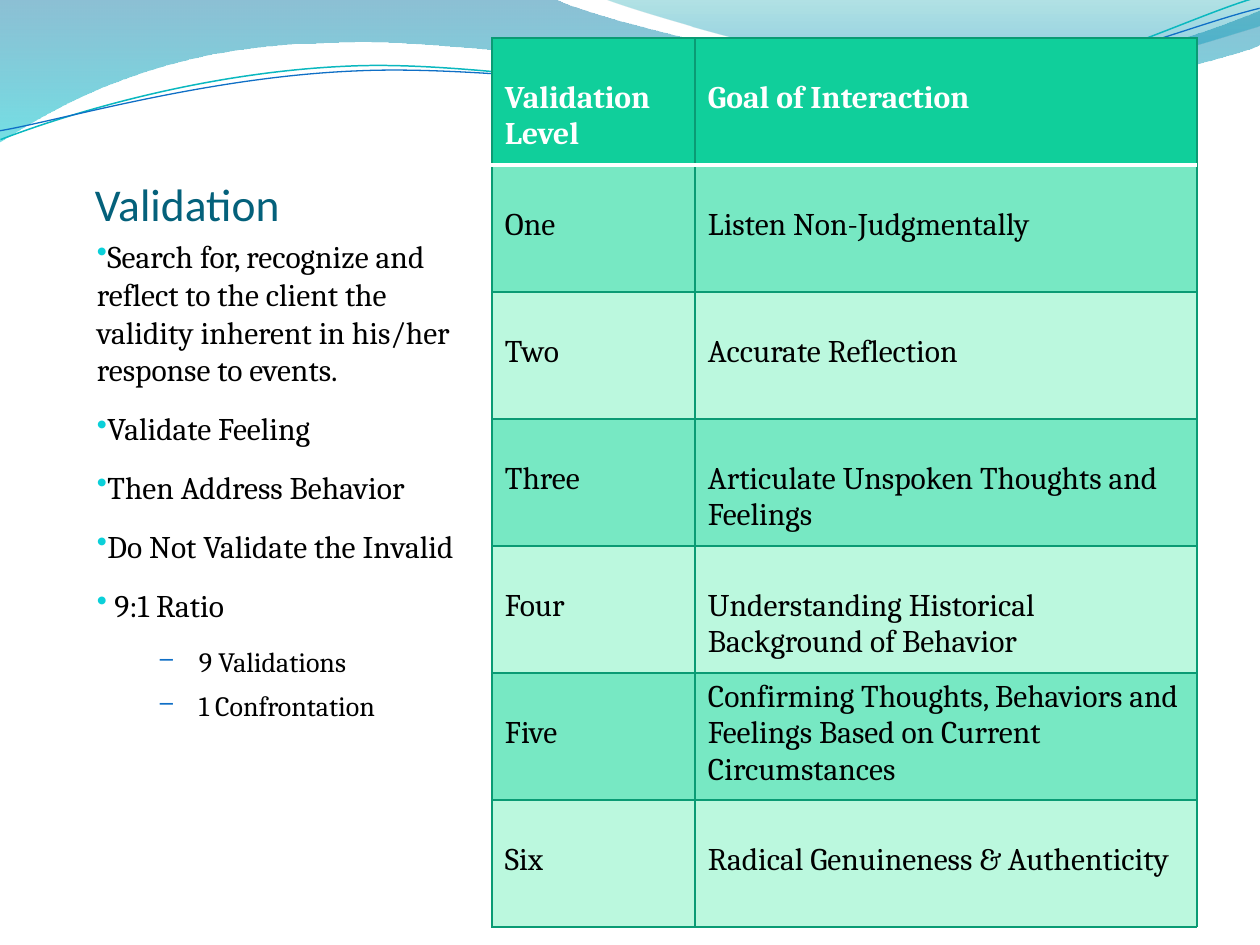
"""Build the Validation slide: wave header, bullet list and table of levels."""
from lxml import etree
from pptx import Presentation
from pptx.dml.color import RGBColor
from pptx.enum.text import MSO_ANCHOR
from pptx.oxml.ns import qn
from pptx.util import Pt

BOTTOM = MSO_ANCHOR.BOTTOM
TOP = MSO_ANCHOR.TOP
PX = 914400 / 126
BLACK = RGBColor(0x00, 0x00, 0x00)
WHITE = RGBColor(0xFF, 0xFF, 0xFF)
TITLE = RGBColor(0x04, 0x61, 0x7B)
GREEN = RGBColor(0x10, 0xCF, 0x9B)
MID_GREEN = RGBColor(0x77, 0xE8, 0xC3)
PALE_GREEN = RGBColor(0xBB, 0xF8, 0xDE)
BORDER = RGBColor(0x0A, 0x9B, 0x74)
TEAL = RGBColor(0x0A, 0xB8, 0xBF)
BLUE = RGBColor(0x0F, 0x6F, 0xC6)
CYAN = RGBColor(0x0B, 0xD0, 0xD9)
WAVE_BLUE = RGBColor(0x00, 0x74, 0xA1)
WAVE_CYAN = RGBColor(0x00, 0xC6, 0xCF)
CREST_TEAL = RGBColor(0x00, 0xA1, 0xA9)
CREST_BLUE = RGBColor(0x00, 0x8B, 0xBF)


def px(n):
    return round(n * PX)


def add_curve(start, segments, close):
    anchors = [seg[-2:] for seg in segments]
    builder = s.shapes.build_freeform(*start, scale=PX)
    builder.add_line_segments(anchors, close=close)
    sp = builder.convert_to_shape()
    sp.shadow.inherit = False
    left = min(x for x, _ in [start] + anchors)
    top = min(y for _, y in [start] + anchors)
    for node, seg in zip(sp._element.findall(".//" + qn("a:lnTo")), segments):
        if len(seg) == 6:
            node.tag = qn("a:cubicBezTo")
            node.clear()
            for x, y in zip(seg[::2], seg[1::2]):
                etree.SubElement(node, qn("a:pt"), x=str(x - left), y=str(y - top))
    return sp


prs = Presentation()
prs.slide_width, prs.slide_height = px(1260), px(945)
s = prs.slides.add_slide(prs.slide_layouts[6])

waves = [
    ((-1, -1),
     [(554, -1), (600, 21, 837, 79, 955, 79), (1074, 79, 1207, 33, 1260, 11),
      (1261, 45), (1239, 55, 1096, 96, 940, 95), (784, 94, 481, 35, 324, 43),
      (163, 45, 58, 105, -1, 142)],
     [(0, WAVE_BLUE, 45), (1, WAVE_CYAN, 55)]),
    ((604, -1),
     [(641, 14, 859, 78, 969, 82), (1079, 87, 1211, 40, 1260, 26), (1260, 0)],
     [(0, CREST_TEAL, 30), (0.8, CREST_BLUE, 45)]),
]
for start, segments, stops in waves:
    sp = add_curve(start, segments, True)
    sp.line.fill.background()
    sp.fill.gradient()
    sp.fill.gradient_angle = 270
    for stop, (position, color, _) in zip(sp.fill.gradient_stops, stops):
        stop.position = position
        stop.color.rgb = color
    colors = sp._element.spPr.findall(".//" + qn("a:srgbClr"))
    for clr, (_, _, alpha) in zip(colors, stops):
        etree.SubElement(clr, qn("a:alpha"), val=str(alpha * 1000))

lines = [
    ((-2, 110), [(58, 90, 199, 52, 350, 53), (499, 53, 745, 118, 896, 114),
                 (1048, 110, 1184, 45, 1260, 27)], TEAL, 0.85),
    ((-2, 101), [(57, 94, 207, 57, 357, 58), (509, 58, 750, 112, 902, 108),
                 (1052, 104, 1188, 52, 1262, 38)], BLUE, 0.75),
]
for start, segments, color, width in lines:
    sp = add_curve(start, segments, False)
    sp.rotation = 357.3
    sp.fill.background()
    sp.line.color.rgb = color
    sp.line.width = Pt(width)

title = [("Validation", 0)]
bullets = [
    ("Search for, recognize and reflect to the client the validity inherent "
     "in his/her response to events.", 0),
    ("Validate Feeling", 0),
    ("Then Address Behavior", 0),
    ("Do Not Validate the Invalid", 0),
    (" 9:1 Ratio", 0),
    ("9 Validations", 1),
    ("1 Confrontation", 1),
]
levels = [
    (18, 12, 0, 0, "•", CYAN, 95),
    (16, 6, 102, -39, "–", BLUE, 85),
]
for items, top, height, anchor, inset in [(title, 71, 160, BOTTOM, 0),
                                          (bullets, 231, 630, TOP, 2)]:
    tf = s.shapes.add_textbox(px(95), px(top), px(378), px(height)).text_frame
    tf.word_wrap = True
    tf.vertical_anchor = anchor
    tf.margin_left = tf.margin_right = px(inset)
    tf.margin_top = px(6)
    tf.margin_bottom = px(6 if inset else 0)
    for i, (text, level) in enumerate(items):
        p = tf.paragraphs[0] if i == 0 else tf.add_paragraph()
        r = p.add_run()
        r.text = text
        if items is title:
            r.font.name, r.font.size = "Calibri", Pt(26)
            r.font.color.rgb = TITLE
            continue
        size, after, margin, indent, char, color, scale = levels[level]
        r.font.name, r.font.size = "Cambria", Pt(size)
        r.font.color.rgb = BLACK
        p.level = level
        p.space_after = Pt(after)
        pPr = p._p.get_or_add_pPr()
        pPr.set("marL", str(px(margin)))
        pPr.set("indent", str(px(indent)))
        clr = etree.SubElement(pPr, qn("a:buClr"))
        etree.SubElement(clr, qn("a:srgbClr"), val=str(color))
        etree.SubElement(pPr, qn("a:buSzPct"), val=str(scale * 1000))
        etree.SubElement(pPr, qn("a:buChar"), char=char)

rows = [
    ("Validation\nLevel", "Goal of Interaction"),
    ("One", "Listen Non-Judgmentally"),
    ("Two", "Accurate Reflection"),
    ("Three", "Articulate Unspoken Thoughts and Feelings"),
    ("Four", "Understanding Historical Background of Behavior"),
    ("Five", "Confirming Thoughts, Behaviors and Feelings Based on Current "
             "Circumstances"),
    ("Six", "Radical Genuineness & Authenticity"),
]
table = s.shapes.add_table(len(rows), 2, px(492), px(38), px(705), px(889)).table
for column, width in zip(table.columns, (203, 502)):
    column.width = px(width)
for i, row in enumerate(rows):
    table.rows[i].height = px(127)
    for j, text in enumerate(row):
        cell = table.cell(i, j)
        cell.fill.solid()
        cell.fill.fore_color.rgb = (GREEN if i == 0 else
                                    MID_GREEN if i % 2 else PALE_GREEN)
        cell.margin_left = cell.margin_right = px(13)
        cell.margin_top = px(6 if (i, j) == (5, 1) else 42)
        cell.margin_bottom = px(0)
        tf = cell.text_frame
        for k, part in enumerate(text.split("\n")):
            p = tf.paragraphs[0] if k == 0 else tf.add_paragraph()
            r = p.add_run()
            r.text = part
            r.font.name, r.font.size = "Cambria", Pt(18)
            r.font.bold = i == 0
            r.font.color.rgb = WHITE if i == 0 else BLACK
        tcPr = cell._tc.get_or_add_tcPr()
        for n, side in enumerate(("lnL", "lnR", "lnT", "lnB")):
            header_rule = (i, side) in ((0, "lnB"), (1, "lnT"))
            color, width = (WHITE, 2) if header_rule else (BORDER, 0.75)
            ln = etree.Element(qn("a:" + side), w=str(Pt(width)))
            fill = etree.SubElement(ln, qn("a:solidFill"))
            etree.SubElement(fill, qn("a:srgbClr"), val=str(color))
            tcPr.insert(n, ln)

prs.save("out.pptx")
